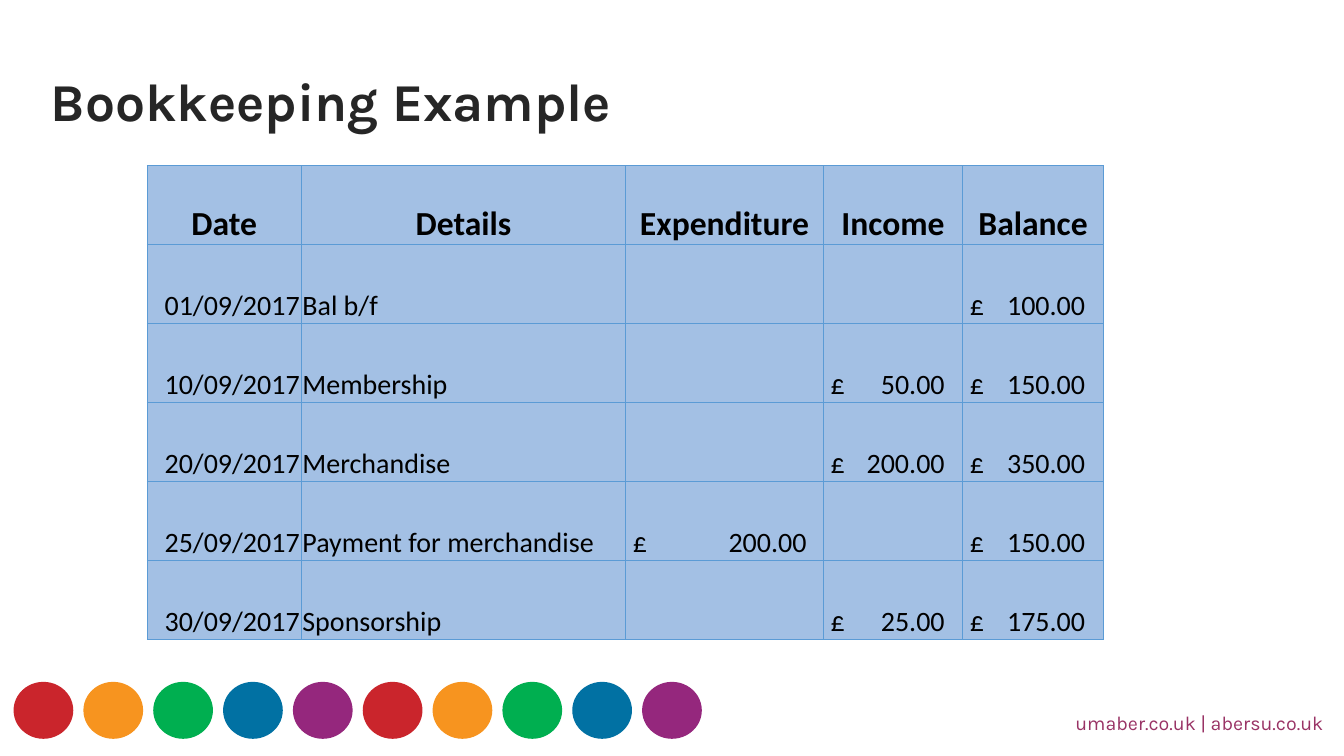
"""Build the bookkeeping example slide."""
from lxml.etree import SubElement
from pptx import Presentation
from pptx.dml.color import RGBColor
from pptx.enum.shapes import MSO_SHAPE
from pptx.enum.text import MSO_ANCHOR, PP_ALIGN
from pptx.oxml.ns import qn
from pptx.util import Cm, Pt

HUES = {
    "red": "CA252C", "orange": "F7941F", "green": "00AF50",
    "blue": "0171A3", "purple": "95277D", "title": "262626",
    "footer": "993365", "text": "000000", "cell": "A3C0E4", "rule": "5B9BD5",
}
ROWS = [
    ("Date", "Details", "Expenditure", "Income", "Balance"),
    ("01/09/2017", "Bal b/f", "", "", "£\t100.00"),
    ("10/09/2017", "Membership", "", "£\t50.00", "£\t150.00"),
    ("20/09/2017", "Merchandise", "", "£\t200.00", "£\t350.00"),
    ("25/09/2017", "Payment for merchandise", "£\t200.00", "", "£\t150.00"),
    ("30/09/2017", "Sponsorship", "", "£\t25.00", "£\t175.00"),
]
WIDTHS = [3.88, 8.18, 4.98, 3.51, 3.55]
TABS = {2: 4.38, 3: 2.88, 4: 2.91}


def style(para, face, size, hue, bold=False):
    for run in para.runs:
        run.font.name = face
        run.font.size = Pt(size)
        run.font.bold = bold
        run.font.color.rgb = RGBColor.from_string(HUES[hue])


def border(cell):
    props = cell._tc.get_or_add_tcPr()
    for spot, side in enumerate(("a:lnL", "a:lnR", "a:lnT", "a:lnB")):
        line = SubElement(props, qn(side), w=str(Pt(0.5)))
        fill = SubElement(line, qn("a:solidFill"))
        SubElement(fill, qn("a:srgbClr"), val=HUES["rule"])
        props.remove(line)
        props.insert(spot, line)


deck = Presentation()
deck.slide_width, deck.slide_height = Cm(33.87), Cm(19.05)
slide = deck.slides.add_slide(deck.slide_layouts[5])
shapes = slide.shapes

title = shapes.title
title.left, title.top = Cm(1.02), Cm(1.78)
title.width, title.height = Cm(25.98), Cm(2.24)
frame = title.text_frame
frame.text = "Bookkeeping Example"
frame.vertical_anchor = MSO_ANCHOR.TOP
head = frame.paragraphs[0]
head.alignment = PP_ALIGN.LEFT
head.line_spacing = 0.9
style(head, "Karla", 38, "title", True)

foot = shapes.add_textbox(Cm(26.85), Cm(17.78), Cm(7.11), Cm(1.45)).text_frame
foot.word_wrap = True
foot.text = "umaber.co.uk | abersu.co.uk"
style(foot.paragraphs[0], "Karla", 14, "footer")

for spot, hue in enumerate(["red", "orange", "green", "blue", "purple"] * 2):
    dot = shapes.add_shape(MSO_SHAPE.OVAL, Cm(0.36 + 1.76 * spot), Cm(17.2),
                           Cm(1.47), Cm(1.4))
    dot.shadow.inherit = False
    dot.fill.solid()
    dot.fill.fore_color.rgb = RGBColor.from_string(HUES[hue])
    dot.line.color.rgb = RGBColor.from_string(HUES[hue])
    dot.line.width = Pt(1)

table = shapes.add_table(len(ROWS), len(WIDTHS), Cm(3.71), Cm(4.17),
                         Cm(sum(WIDTHS)), Cm(11.94)).table
table.first_row = table.horz_banding = False
for col, width in zip(table.columns, WIDTHS):
    col.width = Cm(width)
for row, texts in enumerate(ROWS):
    table.rows[row].height = Cm(1.99)
    for col, text in enumerate(texts):
        cell = table.cell(row, col)
        cell.fill.solid()
        cell.fill.fore_color.rgb = RGBColor.from_string(HUES["cell"])
        border(cell)
        cell.vertical_anchor = MSO_ANCHOR.BOTTOM
        cell.margin_left = cell.margin_right = cell.margin_top = Cm(0.03)
        cell.margin_bottom = 0
        cell.text_frame.text = text
        para = cell.text_frame.paragraphs[0]
        if row == 0:
            para.alignment = PP_ALIGN.CENTER
        elif col == 0:
            para.alignment = PP_ALIGN.RIGHT
        elif text and col in TABS:
            cell.margin_left = Cm(0.18)
            tabs = SubElement(para._p.get_or_add_pPr(), qn("a:tabLst"))
            SubElement(tabs, qn("a:tab"), pos=str(Cm(TABS[col])), algn="r")
        style(para, "Calibri", 20 if row else 24, "text", row == 0)

deck.save("out.pptx")
